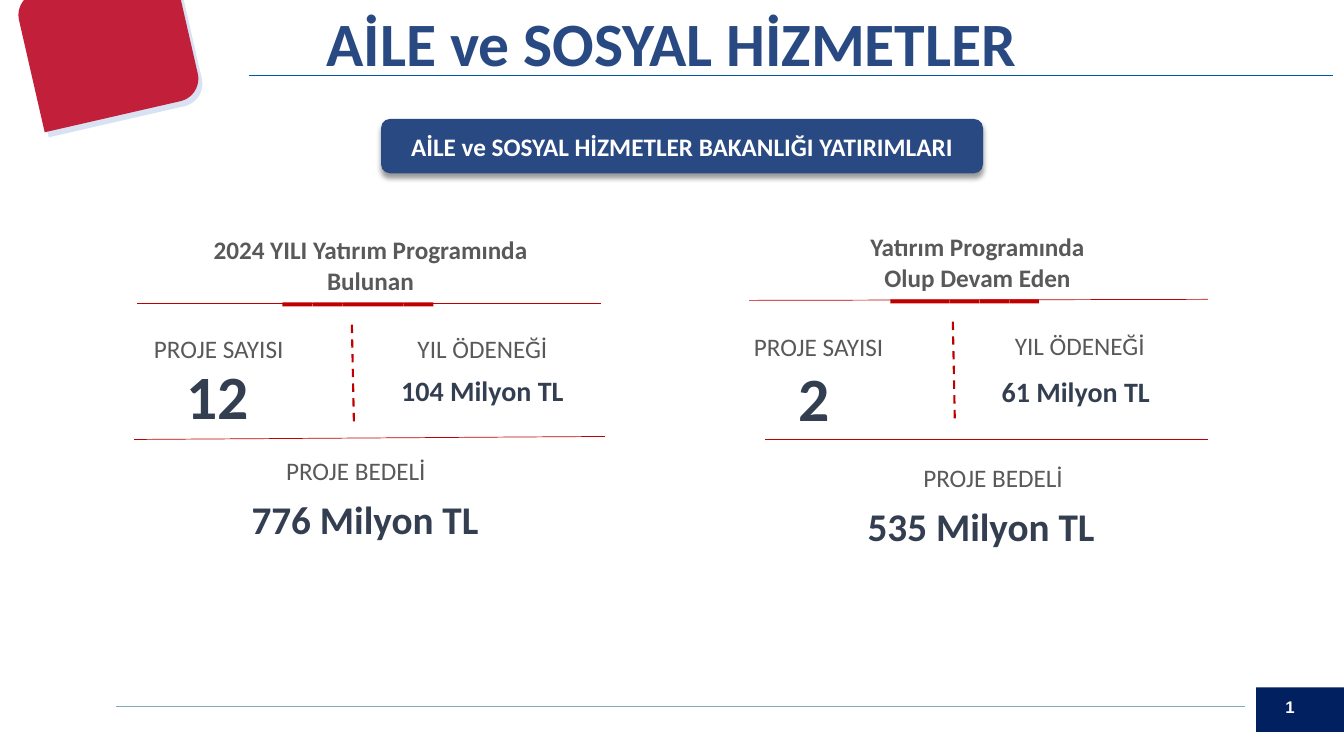
from lxml import etree
from pptx import Presentation
from pptx.dml.color import RGBColor
from pptx.enum.dml import MSO_LINE
from pptx.enum.shapes import MSO_CONNECTOR, MSO_SHAPE
from pptx.enum.text import MSO_ANCHOR, PP_ALIGN
from pptx.oxml.ns import qn
from pptx.util import Inches, Pt

RECT = MSO_SHAPE.RECTANGLE
ROUND = MSO_SHAPE.ROUNDED_RECTANGLE
LEAF = MSO_SHAPE.ROUND_2_DIAG_RECTANGLE
STRAIGHT = MSO_CONNECTOR.STRAIGHT
DASH = MSO_LINE.DASH
LEFT, CENTER = PP_ALIGN.LEFT, PP_ALIGN.CENTER
TOP, MIDDLE = MSO_ANCHOR.TOP, MSO_ANCHOR.MIDDLE

WHITE = RGBColor(0xFF, 0xFF, 0xFF)
BLUE = RGBColor(0x29, 0x49, 0x83)
NAVY = RGBColor(0x00, 0x20, 0x60)
RULE = RGBColor(0x00, 0x5A, 0xAA)
TEAL = RGBColor(0x81, 0xAB, 0xB8)
SKY = RGBColor(0x44, 0x72, 0xC4)
CRIMSON = RGBColor(0xC2, 0x1F, 0x3A)
RED = RGBColor(0xC0, 0x00, 0x00)
GRAY = RGBColor(0x59, 0x59, 0x59)
SLATE = RGBColor(0x33, 0x3F, 0x50)

# Content
TITLE = "AİLE ve SOSYAL HİZMETLER"
BANNER = "AİLE ve SOSYAL HİZMETLER BAKANLIĞI YATIRIMLARI"
PAGE = "1"

# Text styles: size, colour, bold
STYLES = {
    "head": (18, GRAY, True),
    "label": (18, GRAY, False),
    "count": (44, SLATE, True),
    "sum": (20, SLATE, True),
    "total": (28, SLATE, True),
}

# Texts: style, words, box (left, top, width, height)
PANELS = [
    {
        "texts": [
            ("head", "2024 YILI Yatırım Programında\nBulunan", (1, 2.28, 5.35, 0.71)),
            ("label", "PROJE SAYISI", (1.4, 3.26, 1.54, 0.4)),
            ("count", "12", (1.66, 3.5, 0.99, 0.84)),
            ("label", "YIL ÖDENEĞİ", (4.01, 3.26, 1.55, 0.4)),
            ("sum", "104 Milyon TL", (3.87, 3.66, 1.83, 0.44)),
            ("label", "PROJE BEDELİ", (2.71, 4.47, 1.64, 0.4)),
            ("total", "776 Milyon TL", (1.73, 4.86, 3.78, 0.57)),
        ],
        "strip": (2.8, 3, 0.3),
        "rules": [(1.36, 3.01, 5.96, 3.01), (1.33, 4.36, 6, 4.33)],
        "split": (3.51, 4.18, 3.49, 3.22),
    },
    {
        "texts": [
            ("head", "Yatırım Programında\nOlup Devam Eden", (7.09, 2.25, 5.21, 0.71)),
            ("label", "PROJE SAYISI", (7.37, 3.24, 1.5, 0.4)),
            ("count", "2", (7.68, 3.52, 0.79, 0.84)),
            ("label", "YIL ÖDENEĞİ", (9.96, 3.23, 1.5, 0.4)),
            ("sum", "61 Milyon TL", (9.83, 3.67, 1.68, 0.44)),
            ("label", "PROJE BEDELİ", (9.03, 4.54, 1.64, 0.4)),
            ("total", "535 Milyon TL", (8.49, 4.93, 2.48, 0.57)),
        ],
        "strip": (8.83, 2.97, 0.295),
        "rules": [(7.43, 2.98, 11.98, 2.97), (7.59, 4.36, 11.98, 4.36)],
        "split": (9.47, 4.15, 9.45, 3.17),
    },
]
PARTS = 5

prs = Presentation()
prs.slide_width, prs.slide_height = Inches(13.33), Inches(7.5)
slide = prs.slides.add_slide(prs.slide_layouts[6])
shapes = slide.shapes


def write(text, box=None, shape=None, size=18, color=GRAY, bold=False,
          font="Calibri", align=CENTER, anchor=TOP):
    if shape is None:
        shape = shapes.add_textbox(*map(Inches, box))
    frame = shape.text_frame
    frame.word_wrap = False
    frame.vertical_anchor = anchor
    frame.text = text
    for para in frame.paragraphs:
        para.alignment = align
        para.font.name, para.font.size = font, Pt(size)
        para.font.bold, para.font.color.rgb = bold, color


def block(kind, box, fill, turn=0):
    shape = shapes.add_shape(kind, *map(Inches, box))
    shape.shadow.inherit = False
    shape.fill.solid()
    shape.fill.fore_color.rgb = fill
    shape.line.fill.background()
    shape.rotation = turn
    return shape


def rule(ends, color, width, dash=None):
    line = shapes.add_connector(STRAIGHT, *map(Inches, ends))
    line.line.color.rgb, line.line.width = color, Pt(width)
    if dash:
        line.line.dash_style = dash
    etree.SubElement(line._element.spPr, qn("a:effectLst"))


# Footer and title rule
rule((1.15, 7.01, 12.35, 7.01), TEAL, 0.75)
block(RECT, (12.46, 6.82, 0.87, 0.44), NAVY)
write(PAGE, (12.65, 6.86, 0.99, 0.3), size=12, color=WHITE, bold=True,
      font="Arial", align=LEFT)
rule((2.47, 0.75, 13.22, 0.75), RULE, 1)

# Corner leaf over its pale echo
echo = block(LEAF, (0.31, -0.17, 1.61, 1.37), SKY, 347.1)
tint = echo._element.spPr.find(qn("a:solidFill"))[0]
etree.SubElement(tint, qn("a:alpha"), val="20000")
block(LEAF, (0.27, -0.22, 1.61, 1.37), CRIMSON, 347.1)

# Title and banner
write(TITLE, (1.3, 0, 10.73, 0.84), size=44, color=BLUE, bold=True)
banner = block(ROUND, (3.78, 1.18, 5.97, 0.54), BLUE)
glow = etree.SubElement(
    banner._element.spPr.find(qn("a:effectLst")), qn("a:outerShdw"),
    blurRad=str(Pt(4)), dist=str(Pt(3)), dir="5400000", rotWithShape="0")
shade = etree.SubElement(glow, qn("a:srgbClr"), val="000000")
etree.SubElement(shade, qn("a:alpha"), val="40000")
write(BANNER, shape=banner, color=WHITE, bold=True, anchor=MIDDLE)

# Panels
for panel in PANELS:
    left, top, step = panel["strip"]
    for i in range(PARTS):
        block(RECT, (left + i * step, top, step, 0.04), RED)
    for ends in panel["rules"]:
        rule(ends, RED, 0.5)
    rule(panel["split"], RED, 1.5, DASH)
    for style, text, box in panel["texts"]:
        size, color, bold = STYLES[style]
        write(text, box, size=size, color=color, bold=bold)

prs.save("out.pptx")
